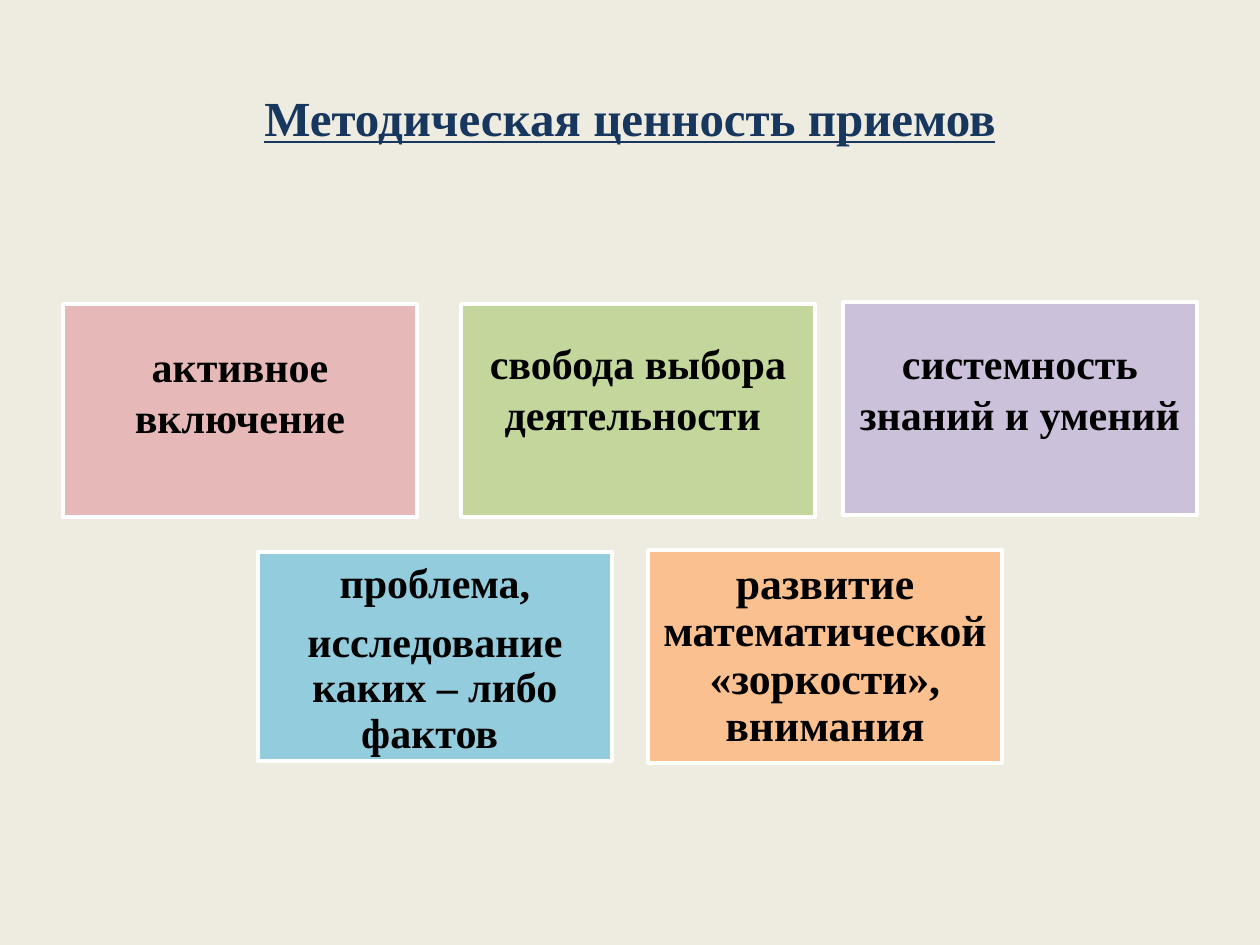
"""Build a slide with a title and five coloured cards."""
import pptx
import pptx.dml.color
import pptx.enum.shapes
import pptx.enum.text
import pptx.util

SCALE = 914400 // 126
WIDE = 354
FONT = "Times New Roman"


def px(size):
    """Turn pixels into EMU."""
    return pptx.util.Emu(size * SCALE)


def color(code):
    """Turn a hex string into a colour."""
    return pptx.dml.color.RGBColor.from_string(code)


def paint(fill, code):
    """Give a fill one solid colour."""
    fill.solid()
    fill.fore_color.rgb = color(code)


def style(para, size, code):
    """Set the bold, centred look of a paragraph."""
    para.alignment = pptx.enum.text.PP_ALIGN.CENTER
    font = para.font
    font.name = FONT
    font.size = pptx.util.Pt(size)
    font.bold = True
    font.color.rgb = color(code)


def title(slide, text):
    """Add the underlined title."""
    box = slide.shapes.add_textbox(px(63), px(38), px(1134), px(158))
    frame = box.text_frame
    frame.word_wrap = True
    frame.vertical_anchor = pptx.enum.text.MSO_ANCHOR.MIDDLE
    frame.text = text
    para = frame.paragraphs[0]
    style(para, 28, "17375E")
    para.font.underline = True


def card(slide, left, top, high, fill, text, inset, size, pitch):
    """Add a white-edged card with text starting at the inset."""
    kind = pptx.enum.shapes.MSO_SHAPE.RECTANGLE
    box = slide.shapes.add_shape(kind, px(left), px(top), px(WIDE), px(high))
    box.shadow.inherit = False
    paint(box.fill, fill)
    paint(box.line.fill, "FFFFFF")
    box.line.width = pptx.util.Pt(2)
    frame = box.text_frame
    frame.word_wrap = True
    frame.vertical_anchor = pptx.enum.text.MSO_ANCHOR.TOP
    frame.margin_left = frame.margin_right = px(12)
    frame.margin_top, frame.margin_bottom = px(inset), 0
    frame.text = text
    for para in frame.paragraphs:
        style(para, size, "000000")
        para.line_spacing = pitch
    for para in frame.paragraphs[:-1]:
        para.space_after = pptx.util.Pt(8)


def main():
    """Build and save the slide."""
    deck = pptx.Presentation()
    deck.slide_width, deck.slide_height = px(1260), px(945)
    slide = deck.slides.add_slide(deck.slide_layouts[6])
    paint(slide.background.fill, "EEECE1")
    title(slide, "Методическая ценность приемов")
    cards = [
        (63, 304, 213, "E6B9B8", "активное включение", 37, 24, 1.0),
        (461, 304, 213, "C3D69B", "свобода выбора деятельности ", 34, 24, 1.0),
        (843, 302, 213, "CCC1DA", "системность знаний и умений", 36, 24, 1.0),
        (258, 552, 209, "93CDDD",
         "проблема,\nисследование каких – либо фактов ", 10, 24, 0.9),
        (648, 550, 213, "FAC090",
         "развитие математической «зоркости», внимания", 12, 25, 0.9),
    ]
    for item in cards:
        card(slide, *item)
    deck.save("out.pptx")


if __name__ == "__main__":
    main()
